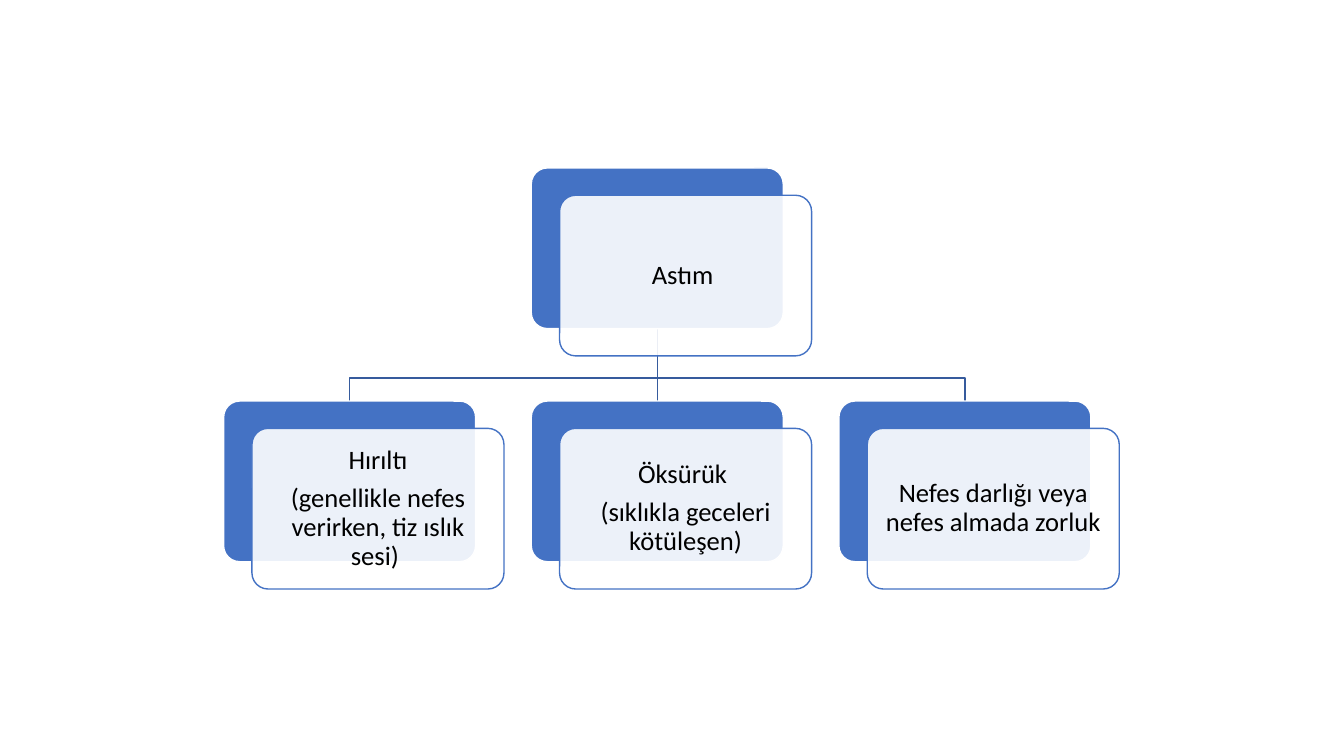
from lxml.etree import SubElement
from pptx import Presentation
from pptx.dml.color import RGBColor
from pptx.enum.shapes import MSO_CONNECTOR, MSO_SHAPE
from pptx.enum.text import MSO_ANCHOR, PP_ALIGN
from pptx.oxml.ns import qn
from pptx.util import Pt

PX = 9525  # 96 px to the inch
BLUE = RGBColor(0x44, 0x72, 0xC4)
NAVY = RGBColor(0x36, 0x5B, 0x9D)
WHITE = RGBColor(0xFF, 0xFF, 0xFF)
BLACK = RGBColor(0, 0, 0)

# Card grid
WIDE, HIGH = 240, 153
LEFT, STEP = 213, 293
TOP, LOW = 160, 382
SHIFT_X, SHIFT_Y = 27, 26
BAR = 360
PAD = 12

ROOT = ["Astım "]
SIGNS = [
    ["Hırıltı", "(genellikle nefes verirken, tiz ıslık sesi) "],
    ["Öksürük ", "(sıklıkla geceleri kötüleşen)"],
    ["Nefes darlığı veya nefes almada zorluk "],
]


def set_line(shape, color):
    shape.line.color.rgb = color
    shape.line.width = Pt(1)


def add_box(slide, x, y, fill, line):
    box = slide.shapes.add_shape(MSO_SHAPE.ROUNDED_RECTANGLE,
                                 x * PX, y * PX, WIDE * PX, HIGH * PX)
    box.adjustments[0] = 0.1
    box.shadow.inherit = False
    box.fill.solid()
    box.fill.fore_color.rgb = fill
    set_line(box, line)
    return box


def add_text(box, lines):
    frame = box.text_frame
    frame.word_wrap = True
    frame.vertical_anchor = MSO_ANCHOR.MIDDLE
    frame.margin_left = frame.margin_right = PAD * PX
    frame.margin_top = frame.margin_bottom = PAD * PX
    frame.text = "\n".join(lines)
    for para in frame.paragraphs:
        para.alignment = PP_ALIGN.CENTER
        para.line_spacing = 0.9
        para.space_after = Pt(6.65)
        para.font.name = "Calibri"
        para.font.size = Pt(19)
        para.font.color.rgb = BLACK


def add_card(slide, x, y, lines):
    add_box(slide, x, y, BLUE, WHITE)
    front = add_box(slide, x + SHIFT_X, y + SHIFT_Y, WHITE, BLUE)
    # Let the blue card show faintly through the front one
    color = front.fill._xPr.find(qn("a:solidFill"))[0]
    SubElement(color, qn("a:alpha")).set("val", "90000")
    add_text(front, lines)


def add_stem(slide, x):
    stem = slide.shapes.add_connector(MSO_CONNECTOR.STRAIGHT, x * PX,
                                      (TOP + HIGH) * PX, x * PX, LOW * PX)
    set_line(stem, NAVY)
    SubElement(stem._element.spPr, qn("a:effectLst"))


def add_branch(slide, start, end):
    form = slide.shapes.build_freeform(start, TOP + HIGH, scale=PX)
    form.add_line_segments([(start, BAR), (end, BAR), (end, LOW)],
                           close=False)
    branch = form.convert_to_shape()
    branch.shadow.inherit = False
    branch.fill.background()
    set_line(branch, NAVY)


def main():
    deck = Presentation()
    deck.slide_width, deck.slide_height = 1280 * PX, 720 * PX
    slide = deck.slides.add_slide(deck.slide_layouts[6])
    cols = [LEFT + i * STEP for i in range(len(SIGNS))]
    mids = [x + WIDE // 2 for x in cols]

    # Links lie behind the cards
    add_branch(slide, mids[1], mids[2])
    add_stem(slide, mids[1])
    add_branch(slide, mids[1], mids[0])

    # Root card, then its signs
    add_card(slide, cols[1], TOP, ROOT)
    for x, lines in zip(cols, SIGNS):
        add_card(slide, x, LOW, lines)

    deck.save("out.pptx")


if __name__ == "__main__":
    main()
